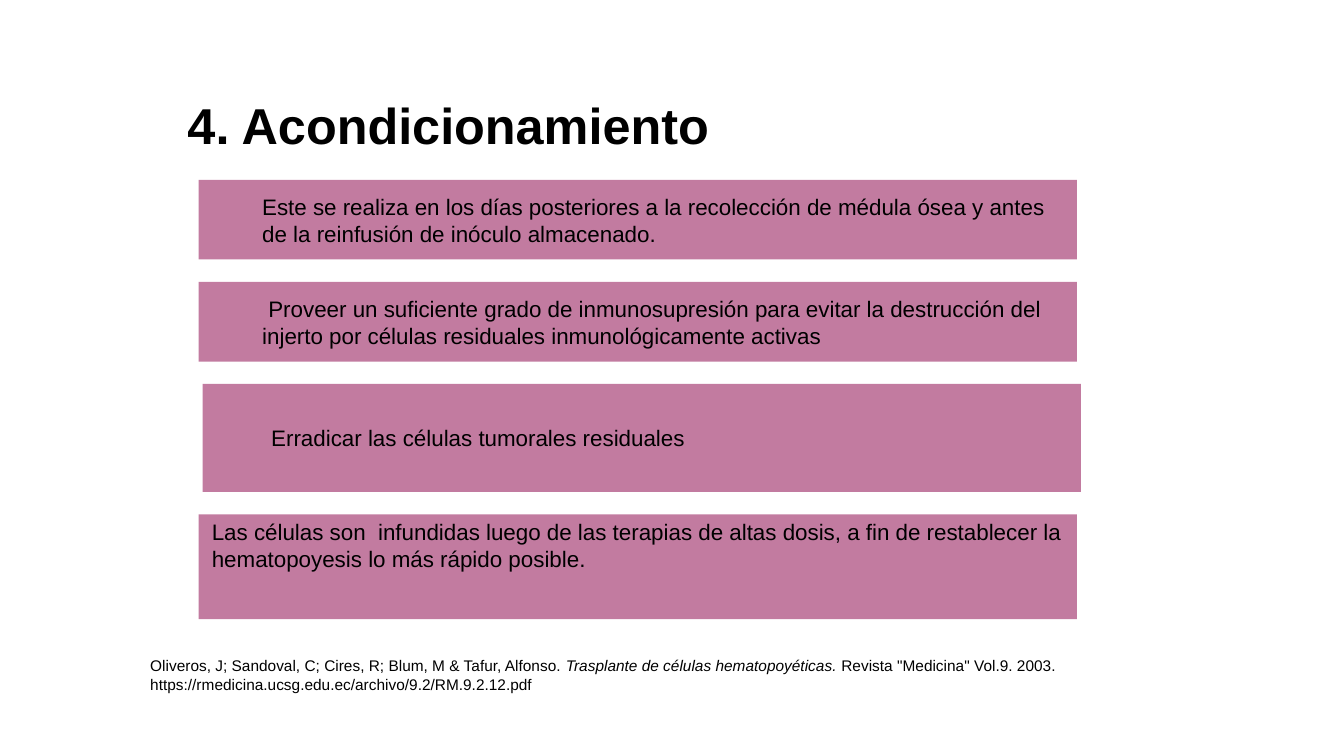
from dataclasses import dataclass

from pptx import Presentation
from pptx import util as u
from pptx.dml import color
from pptx.enum import shapes, text
from pptx.slide import Slide

WIDTH, HEIGHT = 13.33, 7.5
FONT, INK, MAUVE = "Arial", "000000", "C27BA0"
BARS_TOP, BAR_GAP, BAR_WIDTH = 23.8, 2.97, 65.34
TOP, MIDDLE = text.MSO_ANCHOR.TOP, text.MSO_ANCHOR.MIDDLE


@dataclass
class Bar:
    """A filled step, measured in percent of the slide's size."""

    wording: str
    height: float
    left: float = 14.78
    indent: float = 4.73
    anchor: text.MSO_ANCHOR = MIDDLE
    pad: float = 0.93


BARS = [
    Bar("Este se realiza en los días posteriores a la recolección de médula ósea "
        "y antes de la reinfusión de inóculo almacenado.", 10.53),
    Bar(" Proveer un suficiente grado de inmunosupresión para evitar la destrucción "
        "del injerto por células residuales inmunológicamente activas", 10.53),
    Bar("Erradicar las células tumorales residuales", 14.27, left=15.08, indent=5.1),
    Bar("Las células son  infundidas luego de las terapias de altas dosis, a fin de "
        "restablecer la hematopoyesis lo más rápido posible.", 13.87,
        indent=0.98, anchor=TOP, pad=0.53),
]

CITATION = [
    ("Oliveros, J; Sandoval, C; Cires, R; Blum, M & Tafur, Alfonso. ", False),
    ("Trasplante de células hematopoyéticas.", True),
    (' Revista "Medicina" Vol.9. 2003. '
     "https://rmedicina.ucsg.edu.ec/archivo/9.2/RM.9.2.12.pdf", False),
]


def rgb(value: str) -> color.RGBColor:
    """Turn a hex string into a colour."""
    return color.RGBColor.from_string(value)


def across(percent: float) -> u.Emu:
    """Return a share of the slide's width."""
    return u.Inches(WIDTH * percent / 100)


def down(percent: float) -> u.Emu:
    """Return a share of the slide's height."""
    return u.Inches(HEIGHT * percent / 100)


def box(left: float, top: float, width: float, height: float) -> tuple:
    """Return a position and size from shares of the slide."""
    return across(left), down(top), across(width), down(height)


def write(p, wording: str, *, size: float, bold: bool = False, italic: bool = False) -> None:
    """Add a formatted run to a paragraph."""
    r = p.add_run()
    r.text = wording
    r.font.name, r.font.size = FONT, u.Pt(size)
    r.font.bold, r.font.italic = bold, italic
    r.font.color.rgb = rgb(INK)


def frame(sp, *, left: float = 0.75, right: float = 0.75, pad: float = 1.33,
          anchor: text.MSO_ANCHOR = TOP):
    """Set up a text frame and return its left-aligned first paragraph."""
    tf = sp.text_frame
    tf.word_wrap = True
    tf.auto_size = text.MSO_AUTO_SIZE.NONE
    tf.vertical_anchor = anchor
    tf.margin_left, tf.margin_right = across(left), across(right)
    tf.margin_top = tf.margin_bottom = down(pad)
    p = tf.paragraphs[0]
    p.alignment = text.PP_ALIGN.LEFT
    return p


def draw_bars(s: Slide, bars: list[Bar]) -> None:
    """Stack the bars downward with equal gaps."""
    top = BARS_TOP
    for bar in bars:
        sp = s.shapes.add_shape(shapes.MSO_SHAPE.RECTANGLE,
                                *box(bar.left, top, BAR_WIDTH, bar.height))
        sp.shadow.inherit = False
        sp.fill.solid()
        sp.fill.fore_color.rgb = rgb(MAUVE)
        sp.line.fill.background()
        p = frame(sp, left=bar.indent, right=0.98, pad=bar.pad, anchor=bar.anchor)
        write(p, bar.wording, size=16)
        top += bar.height + BAR_GAP


def main() -> None:
    """Build and save the slide."""
    prs = Presentation()
    prs.slide_width, prs.slide_height = u.Inches(WIDTH), u.Inches(HEIGHT)
    s = prs.slides.add_slide(prs.slide_layouts[5])

    title = s.shapes.title
    title.left, title.top, title.width, title.height = box(13.2, 11.07, 64.44, 13.87)
    write(frame(title), "4. Acondicionamiento", size=36, bold=True)

    draw_bars(s, BARS)

    p = frame(s.shapes.add_textbox(*box(10.43, 85.47, 72.54, 7.6)))
    for wording, italic in CITATION:
        write(p, wording, size=11, italic=italic)

    prs.save("out.pptx")


if __name__ == "__main__":
    main()
